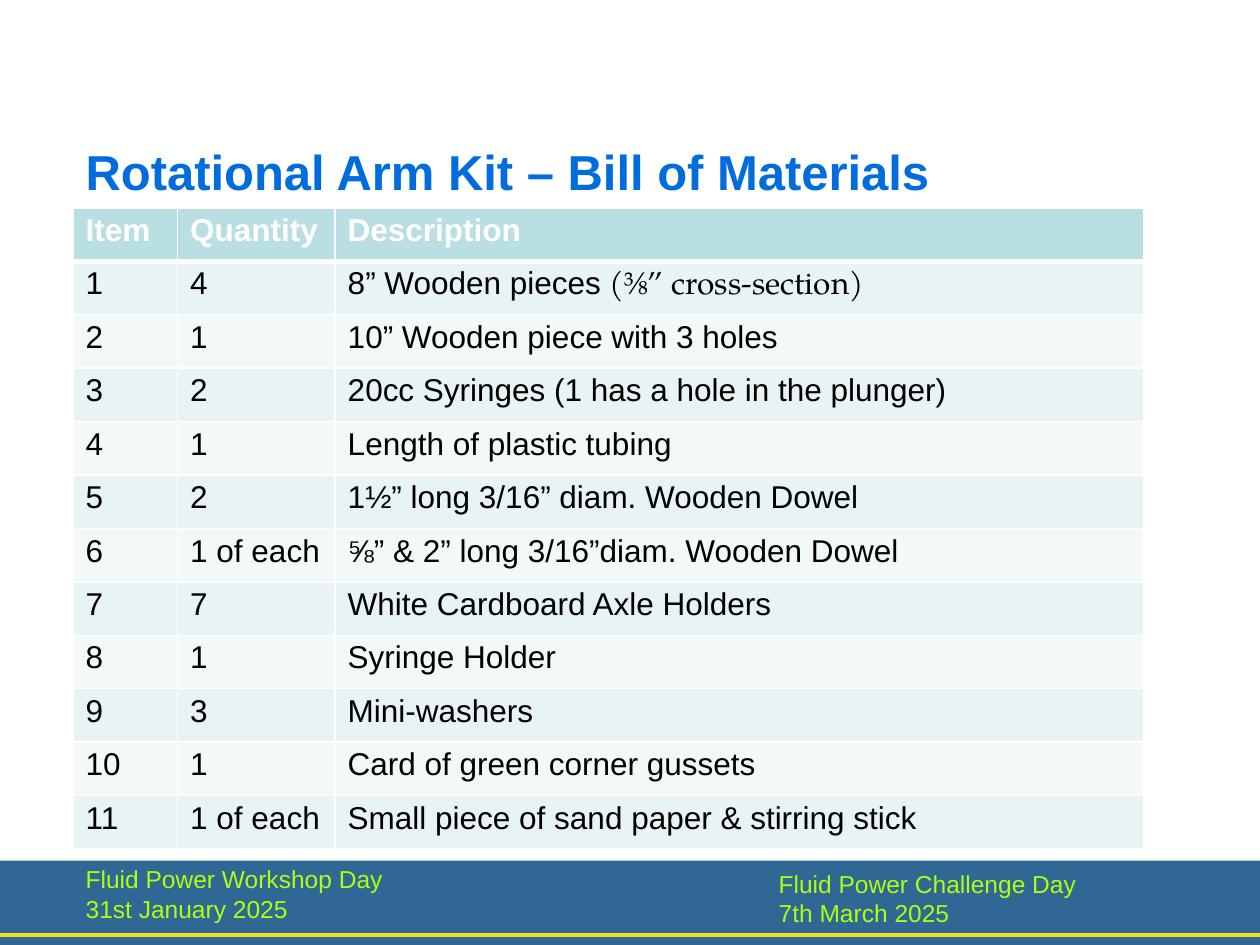
from lxml import etree
from pptx import Presentation
from pptx import util as u
from pptx.dml.color import RGBColor
from pptx.enum import shapes, text
from pptx.oxml import ns

COLORS = {
    "band": "306895", "rule": "F0DE27", "title": "006CDD", "footer": "B0FD12",
    "header": "BADFE2", "odd": "E7F3F4", "even": "F3F8F9",
    "white": "FFFFFF", "black": "000000",
}

HEADERS = ["Item", "Quantity", "Description"]
MATERIALS = [
    ("4", "8” Wooden pieces |(⅜” cross-section)"),
    ("1", "10” Wooden piece with 3 holes"),
    ("2", "20cc Syringes (1 has a hole in the plunger)"),
    ("1", "Length of plastic tubing"),
    ("2", "1½” long 3/16” diam. Wooden Dowel"),
    ("1 of each", "⅝” & 2” long 3/16”diam. Wooden Dowel"),
    ("7", "White Cardboard Axle Holders"),
    ("1", "Syringe Holder"),
    ("3", "Mini-washers"),
    ("1", "Card of green corner gussets"),
    ("1 of each", "Small piece of sand paper & stirring stick"),
]


def rgb(name):
    return RGBColor.from_string(COLORS[name])


class SlideBuilder:
    font = "Arial"
    accent_font = "TeX Gyre Pagella"

    def __init__(self, slide):
        self.s = slide

    def style_run(self, r, size, color, bold=False, font=None):
        r.font.name = font or self.font
        r.font.size = u.Pt(size)
        r.font.bold = bold
        r.font.color.rgb = rgb(color)

    def band(self, x, y, w, h, color):
        sp = self.s.shapes.add_shape(
            shapes.MSO_SHAPE.RECTANGLE, *map(u.Inches, (x, y, w, h)))
        sp.shadow.inherit = False
        sp.fill.solid()
        sp.fill.fore_color.rgb = rgb(color)
        sp.line.fill.background()

    def rule(self, x1, x2, y, color, width):
        sp = self.s.shapes.add_connector(
            shapes.MSO_CONNECTOR.STRAIGHT, *map(u.Inches, (x1, y, x2, y)))
        sp.line.color.rgb = rgb(color)
        sp.line.width = u.Pt(width)
        etree.SubElement(sp._element.spPr, ns.qn("a:effectLst"))

    def label(self, x, y, w, h, words, size, color, bold=False, spacing=None, top=0):
        tf = self.s.shapes.add_textbox(*map(u.Inches, (x, y, w, h))).text_frame
        tf.word_wrap = True
        tf.margin_left = u.Inches(0.01)
        tf.margin_top = u.Inches(top)
        tf.margin_right = tf.margin_bottom = 0
        tf.vertical_anchor = text.MSO_ANCHOR.TOP
        p = tf.paragraphs[0]
        p.text = words
        if spacing:
            p.line_spacing = u.Pt(spacing)
        self.style_run(p.runs[0], size, color, bold)

    def border(self, cell, side, width):
        ln = etree.SubElement(
            cell._tc.get_or_add_tcPr(), ns.qn(f"a:ln{side}"), w=str(u.Pt(width)))
        fill = etree.SubElement(ln, ns.qn("a:solidFill"))
        etree.SubElement(fill, ns.qn("a:srgbClr"), val=COLORS["white"])

    def cell(self, cell, words, row):
        cell.margin_left = u.Inches(0.1)
        cell.margin_top = u.Inches(0.04)
        cell.margin_right = cell.margin_bottom = 0
        widths = {"L": 1, "R": 1, "T": 3 if row == 1 else 1, "B": 3 if row == 0 else 1}
        for side, width in widths.items():
            self.border(cell, side, width)
        cell.fill.solid()
        cell.fill.fore_color.rgb = rgb("header" if row == 0 else "odd" if row % 2 else "even")
        p = cell.text_frame.paragraphs[0]
        for part, font in zip(words.split("|"), (self.font, self.accent_font)):
            r = p.add_run()
            r.text = part
            self.style_run(r, 18, "black" if row else "white", row == 0, font)

    def table(self, x, y, widths, row_height, rows):
        frame = self.s.shapes.add_table(
            len(rows), len(widths),
            *map(u.Inches, (x, y, sum(widths), row_height * len(rows))))
        table = frame.table
        table.horz_banding = False
        for column, width in zip(table.columns, widths):
            column.width = u.Inches(width)
        for i, row in enumerate(rows):
            table.rows[i].height = u.Inches(5.09 / len(rows))
            for j, words in enumerate(row):
                self.cell(table.cell(i, j), words, i)


def main():
    prs = Presentation()
    prs.slide_width, prs.slide_height = u.Inches(10), u.Inches(7.5)
    slide = SlideBuilder(prs.slides.add_slide(prs.slide_layouts[6]))

    slide.band(0, 6.83, 10, 0.67, "band")
    slide.rule(0, 10, 7.42, "rule", 2)
    rows = [HEADERS] + [(str(n), *item) for n, item in enumerate(MATERIALS, 1)]
    slide.table(0.58, 1.65, [0.83, 1.25, 6.42], 5.09 / len(rows), rows)
    slide.label(0.67, 6.86, 2.38, 0.48, "Fluid Power Workshop Day 31st January 2025",
                14, "footer", spacing=16.8)
    slide.label(6.17, 6.9, 2.38, 0.48, "Fluid Power Challenge Day 7th March 2025",
                14, "footer", spacing=16.5)
    slide.label(0.67, 1.11, 6.74, 0.49, "Rotational Arm Kit – Bill of Materials",
                28, "title", bold=True, top=0.01)
    prs.save("out.pptx")


if __name__ == "__main__":
    main()
